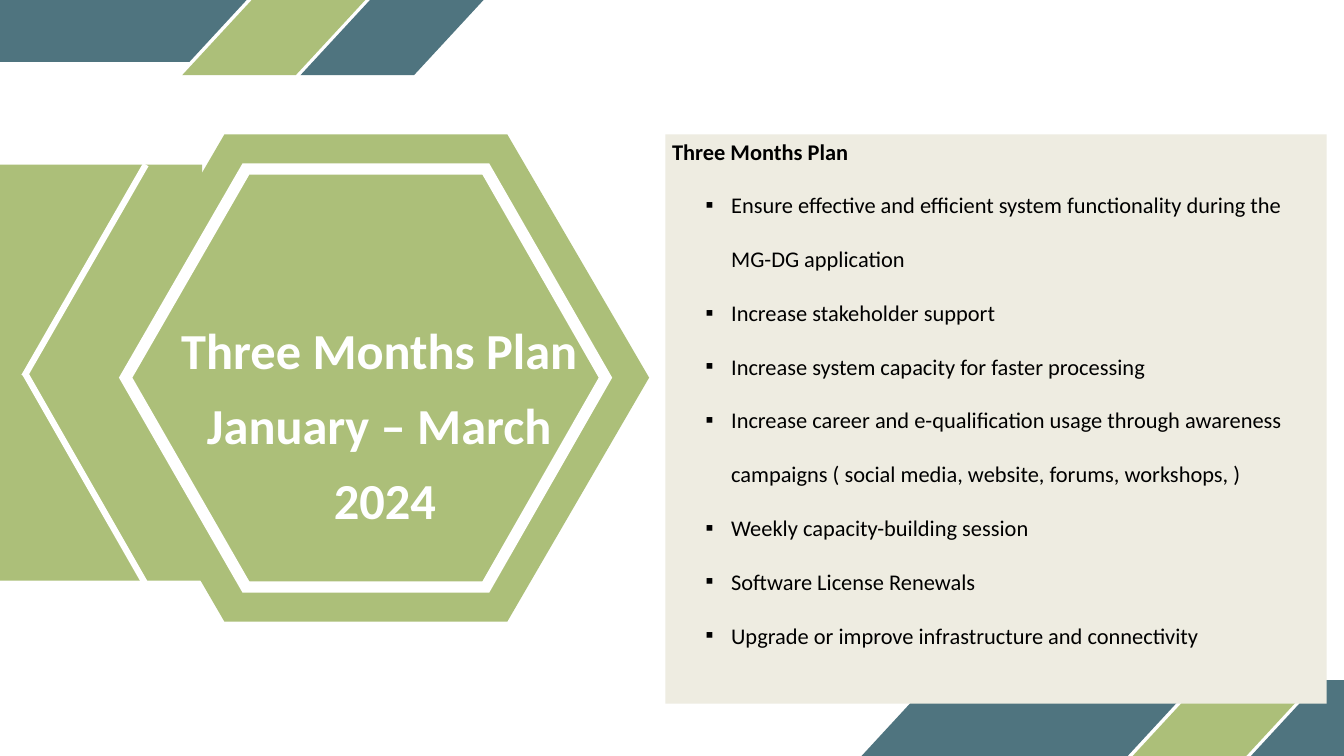
from lxml.etree import SubElement
from pptx import Presentation
from pptx.dml.color import RGBColor
from pptx.enum.shapes import MSO_CONNECTOR as Connector, MSO_SHAPE as Shape
from pptx.enum.text import MSO_ANCHOR as Anchor, MSO_AUTO_SIZE as AutoSize, PP_ALIGN as Align
from pptx.oxml.ns import qn
from pptx.util import Inches, Pt

GREEN = RGBColor(0xAC, 0xBF, 0x79)
TEAL = RGBColor(0x4F, 0x74, 0x7F)
CREAM = RGBColor(0xEE, 0xEC, 0xE1)
WHITE = RGBColor(0xFF, 0xFF, 0xFF)
BLACK = RGBColor(0, 0, 0)

deck = Presentation()
deck.slide_width, deck.slide_height = Inches(20), Inches(11.25)
page = deck.slides.add_slide(deck.slide_layouts[1])
shapes = page.shapes
title, body = shapes.title, page.placeholders[1]


def paint(shape, colour):
    shape.shadow.inherit = False
    shape.fill.solid()
    shape.fill.fore_color.rgb = colour
    shape.line.fill.background()


def add_outline(contours, colour):
    builder = None
    for contour in contours:
        start, *rest = [(Inches(x), Inches(y)) for x, y in contour]
        if builder is None:
            builder = shapes.build_freeform(*start)
        else:
            builder.move_to(*start)
        builder.add_line_segments(rest, close=True)
    paint(builder.convert_to_shape(), colour)


hexagon = [(9.66, 5.62), (7.55, 9.25), (3.34, 9.25), (1.23, 5.62), (3.34, 2), (7.55, 2)]
add_outline([hexagon], GREEN)

for left, top, width, height in [(-0.37, 2.61, 7.15, 6.03), (-0.37, 2.45, 3.38, 3.53)]:
    band = shapes.add_shape(Shape.RECTANGLE, Inches(left), Inches(top), Inches(width), Inches(height))
    paint(band, GREEN)

stripes = [
    (-1.14, 0, 3.96, 0.85, 0.92, TEAL),
    (12.82, 10.33, 3.96, 0.85, 0.92, TEAL),
    (2.71, -0.21, 1.69, 1.23, 1.33, GREEN),
    (16.67, 10.12, 1.69, 1.23, 1.33, GREEN),
    (4.47, -0.21, 1.69, 1.23, 1.33, TEAL),
    (18.43, 10.12, 1.69, 1.23, 1.33, TEAL),
]
for left, top, width, slant, height, colour in stripes:
    bottom = top + height
    corners = [(left + slant, top), (left + slant + width, top), (left + width, bottom), (left, bottom)]
    add_outline([corners], colour)

ring_outer = [(7.28, 2.43), (3.61, 2.43), (1.77, 5.62), (3.61, 8.82), (7.28, 8.82), (9.11, 5.62)]
ring_inner = [(7.18, 8.65), (3.71, 8.65), (1.97, 5.62), (3.71, 2.6), (7.18, 2.6), (8.91, 5.62)]
add_outline([ring_outer, ring_inner], WHITE)

for ends in [(2.17, 8.7, 0.37, 5.55), (0.36, 5.6, 2.17, 2.45)]:
    edge = shapes.add_connector(Connector.STRAIGHT, *map(Inches, ends))
    edge.line.color.rgb = WHITE
    edge.line.width = Pt(6.75)
    SubElement(edge.element.spPr, qn("a:effectLst"))

plan_items = [
    "Ensure effective and efficient system functionality during the MG-DG application",
    "Increase stakeholder support",
    "Increase system capacity for faster processing",
    "Increase career and e-qualification usage through awareness campaigns ( social media, website, forums, workshops, )",
    "Weekly capacity-building session",
    "Software License Renewals",
    "Upgrade or improve infrastructure and connectivity",
]
text_boxes = [
    (title, (2, 4.54, 7.29, 3.29), 0, ["Three Months Plan", "January – March", " 2024"],
     {"name": "Calibri", "size": Pt(54), "bold": True}, WHITE),
    (body, (9.9, 2, 9.84, 8.47), 0.1, ["Three Months Plan", *plan_items],
     {"name": "Calibri", "size": Pt(24), "bold": False}, BLACK),
]
for box, bounds, side_inset, lines, font_format, colour in text_boxes:
    box.left, box.top, box.width, box.height = map(Inches, bounds)
    box.element.getparent().append(box.element)
    frame = box.text_frame
    frame_format = {
        "word_wrap": True, "auto_size": AutoSize.NONE, "vertical_anchor": Anchor.TOP,
        "margin_left": Inches(side_inset), "margin_right": Inches(side_inset),
        "margin_top": Inches(side_inset / 2), "margin_bottom": Inches(side_inset / 2),
    }
    for name, value in frame_format.items():
        setattr(frame, name, value)
    frame.text = "\n".join(lines)
    for para in frame.paragraphs:
        para.space_before = para.space_after = Pt(0)
        for span in para.runs:
            for name, value in font_format.items():
                setattr(span.font, name, value)
            span.font.color.rgb = colour

for para in title.text_frame.paragraphs:
    para.alignment = Align.CENTER
    para.line_spacing = Pt(80)

body.fill.solid()
body.fill.fore_color.rgb = CREAM
heading, *bullets = body.text_frame.paragraphs
heading.runs[0].font.bold = True
heading_props = heading._p.get_or_add_pPr()
heading_props.set("marL", "0")
heading_props.set("indent", "0")
SubElement(heading_props, qn("a:buNone"))
for para in bullets:
    para.level = 1
    para.line_spacing = 2.0
    props = para._p.get_or_add_pPr()
    props.set("marL", str(Inches(0.88)))
    props.set("indent", str(Inches(-0.38)))
    SubElement(props, qn("a:buFont"), typeface="Calibri")
    SubElement(props, qn("a:buChar"), char="▪")

deck.save("out.pptx")
